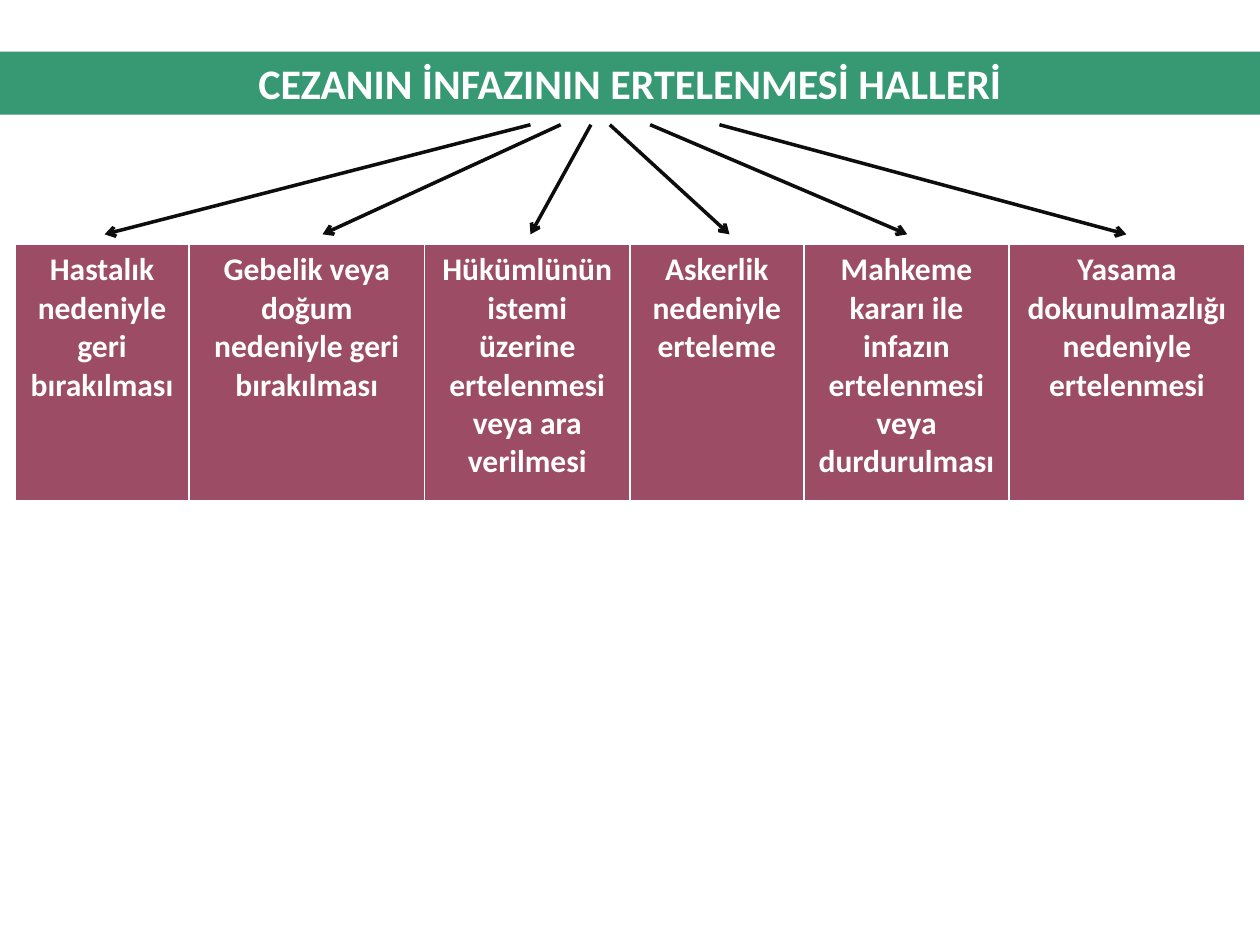
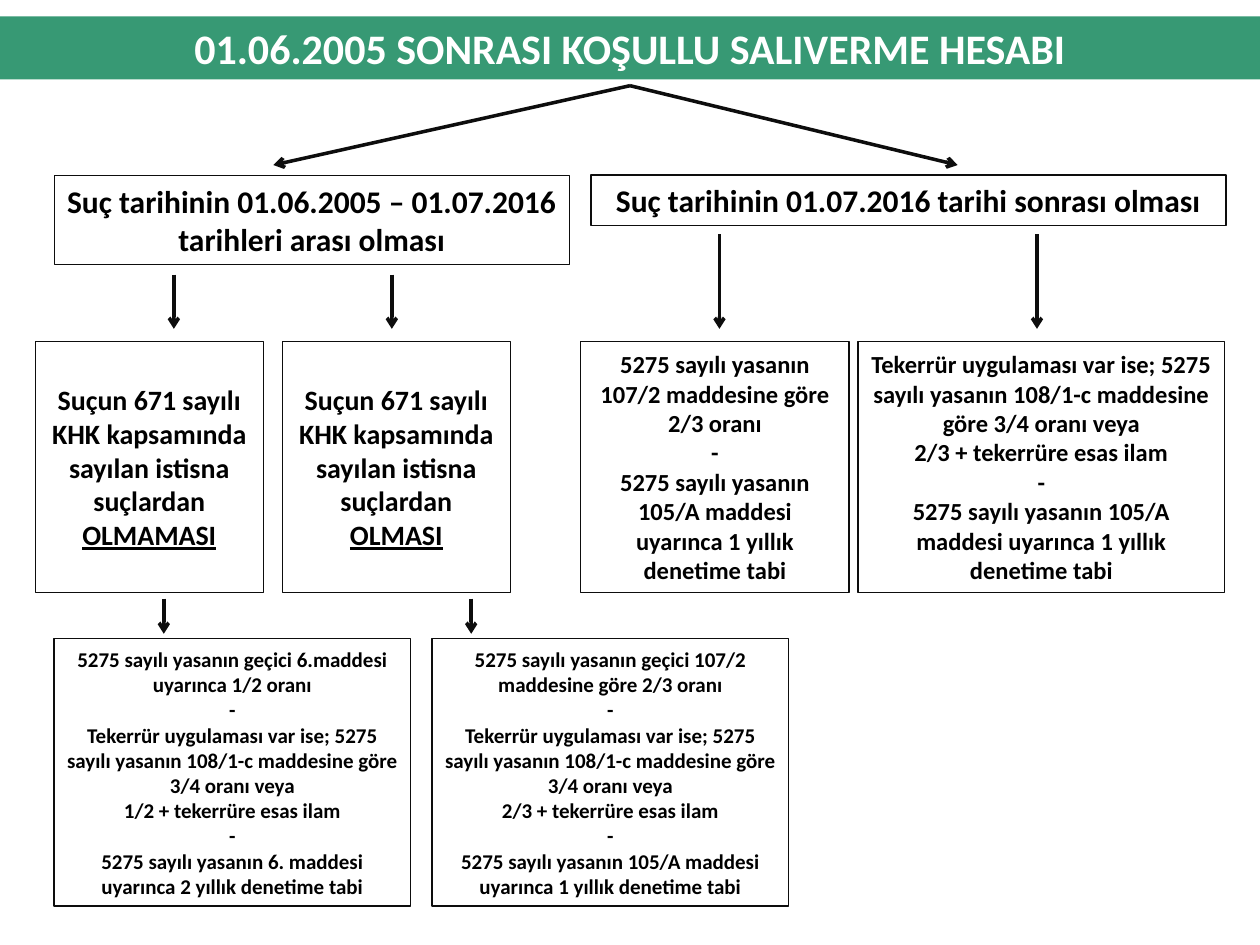
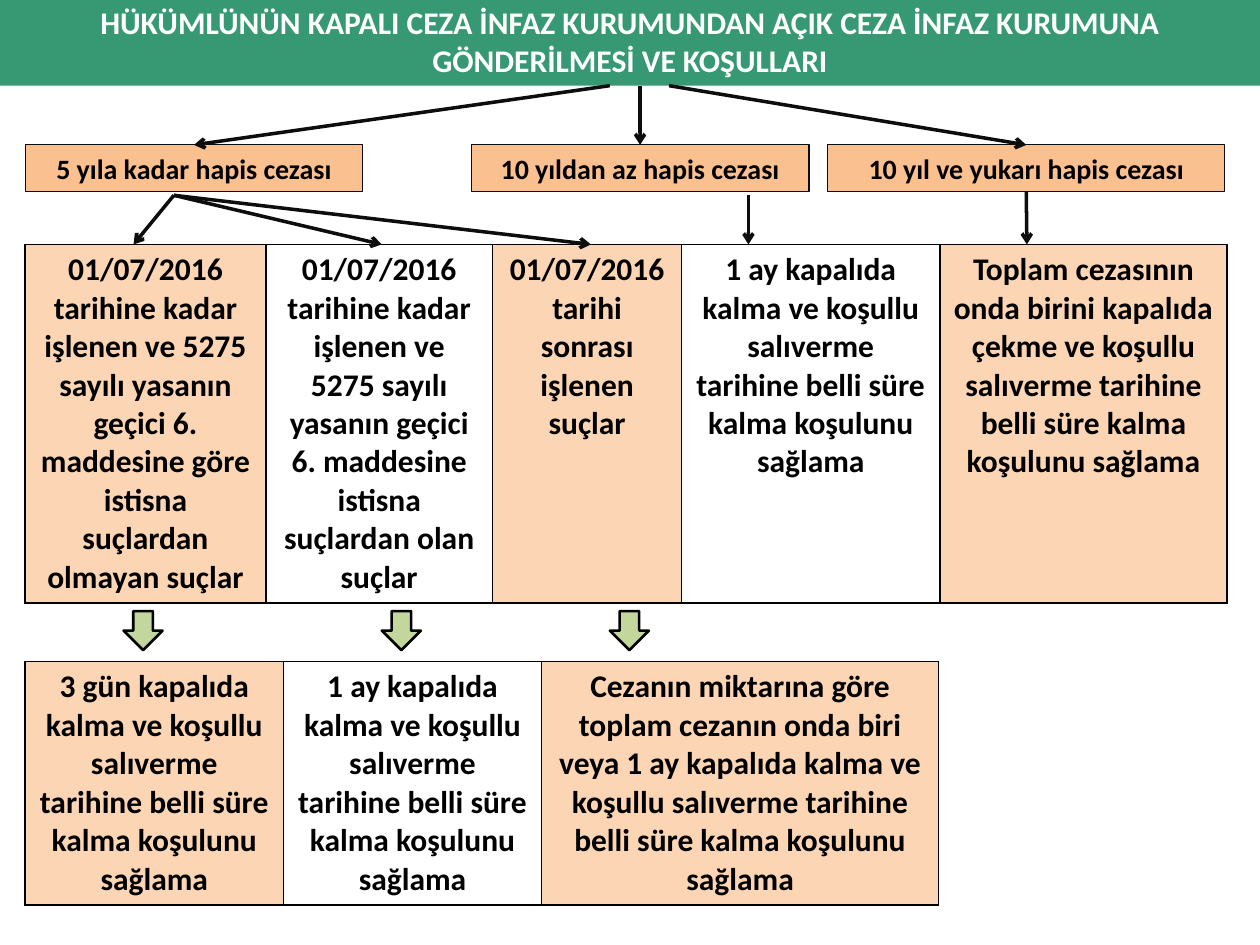
import itertools

import pptx
import pptx.dml.color
import pptx.enum.shapes
import pptx.enum.text
import pptx.oxml
import pptx.oxml.ns
import pptx.util

Inches = pptx.util.Inches
Pt = pptx.util.Pt
Shapes = pptx.enum.shapes.MSO_SHAPE
Anchor = pptx.enum.text.MSO_ANCHOR

COLORS = {
    "band": "379974",
    "plum": "9C4C65",
    "orange": "FAC090",
    "peach": "FCD5B5",
    "green": "C3D69B",
    "ink": "0D0D0D",
    "black": "000000",
    "white": "FFFFFF",
}
TITLE_ONLY = 5
TOP, BOTTOM = 0, 2


def rgb(name):
    return pptx.dml.color.RGBColor.from_string(COLORS[name])


class Deck:
    font = "Calibri"

    def __init__(self):
        self.presentation = pptx.Presentation()
        self.presentation.slide_width = Inches(10)
        self.presentation.slide_height = Inches(7.5)
        self.slide = None

    def place(self, element, at):
        element.left, element.top, element.width, element.height = map(Inches, at)

    def paint(self, element, fill):
        element.fill.solid()
        element.fill.fore_color.rgb = rgb(fill)

    def outline(self, element, color, width):
        element.line.color.rgb = rgb(color)
        element.line.width = Pt(width)

    def set_text(self, frame, lines, size, color="black"):
        frame.word_wrap = True
        for index, line in enumerate(lines):
            paragraph = frame.paragraphs[0] if index == 0 else frame.add_paragraph()
            paragraph.add_run().text = line
            paragraph.alignment = pptx.enum.text.PP_ALIGN.CENTER
            paragraph.font.name = self.font
            paragraph.font.size = Pt(size)
            paragraph.font.bold = True
            paragraph.font.color.rgb = rgb(color)

    def new_slide(self, heading, top, height=0.5, size=24):
        layout = self.presentation.slide_layouts[TITLE_ONLY]
        self.slide = self.presentation.slides.add_slide(layout)
        band = self.slide.shapes.title
        self.place(band, (0, top, 10, height))
        self.paint(band, "band")
        band.text_frame.auto_size = pptx.enum.text.MSO_AUTO_SIZE.NONE
        band.text_frame.vertical_anchor = Anchor.MIDDLE
        self.set_text(band.text_frame, [heading], size, "white")

    def shape(self, kind, at, fill, line, width):
        element = self.slide.shapes.add_shape(kind, *map(Inches, at))
        element.shadow.inherit = False
        self.paint(element, fill)
        self.outline(element, line, width)
        return element

    def box(self, at, lines, size, fill="white", underlined=None):
        box = self.shape(Shapes.RECTANGLE, at, fill, "ink", 0.75)
        box.text_frame.vertical_anchor = Anchor.MIDDLE
        self.set_text(box.text_frame, lines, size)
        if underlined:
            ending = box.text_frame.paragraphs[-1].add_run()
            ending.text = underlined
            ending.font.underline = True
        return box

    def block_arrow(self, left, top):
        arrow = self.shape(Shapes.RIGHT_ARROW, (left, top, 0.31, 0.31), "green", "black", 1.5)
        arrow.rotation = 90

    def arrow(self, start, end, source=None, target=None):
        arrow = self.slide.shapes.add_connector(
            pptx.enum.shapes.MSO_CONNECTOR.STRAIGHT, *map(Inches, start + end))
        self.outline(arrow, "ink", 2)
        if source:
            arrow.begin_connect(source, BOTTOM)
        if target:
            arrow.end_connect(target, TOP)
        line = arrow.get_or_add_ln()
        line.append(line.makeelement(pptx.oxml.ns.qn("a:tailEnd"), {"type": "arrow"}))
        properties = arrow._element.spPr
        properties.append(properties.makeelement(pptx.oxml.ns.qn("a:effectLst")))

    def border(self, cell, color, widths):
        properties = cell._tc.get_or_add_tcPr()
        for side, width in zip("LRTB", widths):
            properties.append(pptx.oxml.parse_xml(
                f'<a:ln{side} xmlns:a="http://schemas.openxmlformats.org/drawingml/2006/main" '
                f'w="{int(Pt(width))}">'
                f'<a:solidFill><a:srgbClr val="{COLORS[color]}"/></a:solidFill>'
                f'</a:ln{side}>'))

    def table(self, left, top, height, widths, texts, fills, color="black",
              border="black", border_widths=(1, 1, 1, 1)):
        frame = self.slide.shapes.add_table(
            1, len(widths), *map(Inches, (left, top, sum(widths), height)))
        table = frame.table
        table.first_row = False
        table.horz_banding = False
        for column, width in zip(table.columns, widths):
            column.width = Inches(width)
        for cell, text, fill in zip(table.rows[0].cells, texts, itertools.cycle(fills)):
            self.border(cell, border, border_widths)
            self.paint(cell, fill)
            self.set_text(cell.text_frame, [text], 18, color)


def postponement(deck):
    deck.new_slide("CEZANIN İNFAZININ ERTELENMESİ HALLERİ", 0.41)
    cases = [
        "Hastalık nedeniyle geri bırakılması",
        "Gebelik veya doğum nedeniyle geri bırakılması",
        "Hükümlünün istemi üzerine ertelenmesi veya ara verilmesi",
        "Askerlik nedeniyle erteleme",
        "Mahkeme kararı ile infazın ertelenmesi veya durdurulması",
        "Yasama dokunulmazlığı nedeniyle ertelenmesi",
    ]
    deck.table(0.12, 1.94, 2.05, (1.38, 1.87, 1.63, 1.38, 1.63, 1.87), cases,
               ["plum"], "white", "white", (1, 1, 1, 3))
    origins = (4.21, 4.45, 4.69, 4.84, 5.16, 5.71)
    targets = (0.83, 2.56, 4.21, 5.79, 7.2, 8.94)
    for origin, target in zip(origins, targets):
        deck.arrow((origin, 0.99), (target, 1.86))


def conditional_release(deck):
    deck.new_slide("01.06.2005 SONRASI KOŞULLU SALIVERME HESABI", 0.13)
    deck.box((0.43, 1.39, 4.09, 0.71),
             ["Suç tarihinin 01.06.2005 – 01.07.2016 tarihleri arası olması"], 18)
    deck.box((4.69, 1.39, 5.04, 0.4),
             ["Suç tarihinin 01.07.2016 tarihi sonrası olması"], 18)

    exception = "Suçun 671 sayılı KHK kapsamında sayılan istisna suçlardan "
    for left, ending in ((0.28, "OLMAMASI"), (2.24, "OLMASI")):
        deck.box((left, 2.71, 1.81, 1.99), [exception], 16, underlined=ending)

    repeat = ("Tekerrür uygulaması var ise; 5275 sayılı yasanın 108/1-c maddesine göre "
              "3/4 oranı veya")
    two_thirds = "2/3 + tekerrüre esas ilam"
    one_year = "5275 sayılı yasanın 105/A maddesi uyarınca 1 yıllık denetime tabi"
    deck.box((4.61, 2.71, 2.13, 1.99),
             ["5275 sayılı yasanın 107/2 maddesine göre 2/3 oranı", "-", one_year], 14)
    deck.box((6.81, 2.71, 2.91, 1.99), [repeat, two_thirds, "-", one_year], 14)
    deck.box((0.43, 5.07, 2.83, 2.12), [
        "5275 sayılı yasanın geçici 6.maddesi uyarınca 1/2 oranı", "-",
        repeat, "1/2 + tekerrüre esas ilam", "-",
        "5275 sayılı yasanın 6. maddesi uyarınca 2 yıllık denetime tabi"], 12)
    deck.box((3.43, 5.07, 2.83, 2.12), [
        "5275 sayılı yasanın geçici 107/2 maddesine göre 2/3 oranı", "-",
        repeat, two_thirds, "-", one_year], 12)

    for period in (2.17, 7.6):
        deck.arrow((5, 0.68), (period, 1.31))
    drops = [(5.71, 1.86, 2.61), (8.23, 1.86, 2.61), (1.38, 2.18, 2.61),
             (3.11, 2.18, 2.61), (1.3, 4.75, 5.03), (3.74, 4.75, 5.03)]
    for across, start, end in drops:
        deck.arrow((across, start), (across, end))


def open_prison(deck):
    deck.new_slide("HÜKÜMLÜNÜN KAPALI CEZA İNFAZ KURUMUNDAN AÇIK CEZA İNFAZ KURUMUNA "
                   "GÖNDERİLMESİ VE KOŞULLARI", -0.03, 0.71, 18)
    sentences = [
        (0.2, 2.68, "5 yıla kadar hapis cezası"),
        (3.74, 2.68, "10 yıldan az hapis cezası"),
        (6.57, 3.15, "10 yıl ve yukarı hapis cezası"),
    ]
    short, medium, long = [deck.box((left, 1.15, width, 0.37), [text], 16, "orange")
                           for left, width, text in sentences]

    one_month = ("1 ay kapalıda kalma ve koşullu salıverme tarihine belli süre kalma "
                 "koşulunu sağlama")
    stripes = ["peach", "white"]
    deck.table(0.2, 1.94, 2.8, (1.91, 1.8, 1.5, 2.05, 2.28), [
        "01/07/2016 tarihine kadar işlenen ve 5275 sayılı yasanın geçici 6. maddesine göre "
        "istisna suçlardan olmayan suçlar",
        "01/07/2016 tarihine kadar işlenen ve 5275 sayılı yasanın geçici 6. maddesine "
        "istisna suçlardan olan suçlar",
        "01/07/2016 tarihi sonrası işlenen suçlar",
        one_month,
        "Toplam cezasının onda birini kapalıda çekme ve koşullu salıverme tarihine belli "
        "süre kalma koşulunu sağlama",
    ], stripes)
    deck.table(0.2, 5.25, 1.9, (2.05, 2.05, 3.15), [
        "3 gün kapalıda kalma ve koşullu salıverme tarihine belli süre kalma koşulunu sağlama",
        one_month,
        "Cezanın miktarına göre toplam cezanın onda biri veya 1 ay kapalıda kalma ve koşullu "
        "salıverme tarihine belli süre kalma koşulunu sağlama",
    ], stripes)
    for left in (0.98, 3.03, 4.84):
        deck.block_arrow(left, 4.85)

    for origin, center, sentence in ((4.84, 1.54, short), (5.08, 5.08, medium),
                                     (5.31, 8.15, long)):
        deck.arrow((origin, 0.68), (center, 1.15), target=sentence)
    for crime in (1.06, 3.03, 4.69):
        deck.arrow((1.38, 1.55), (crime, 1.94))
    deck.arrow((5.94, 1.55), (5.94, 1.94))
    deck.arrow((8.15, 1.52), (8.15, 1.94), source=long)


def main():
    deck = Deck()
    postponement(deck)
    conditional_release(deck)
    open_prison(deck)
    deck.presentation.save("out.pptx")


if __name__ == "__main__":
    main()
